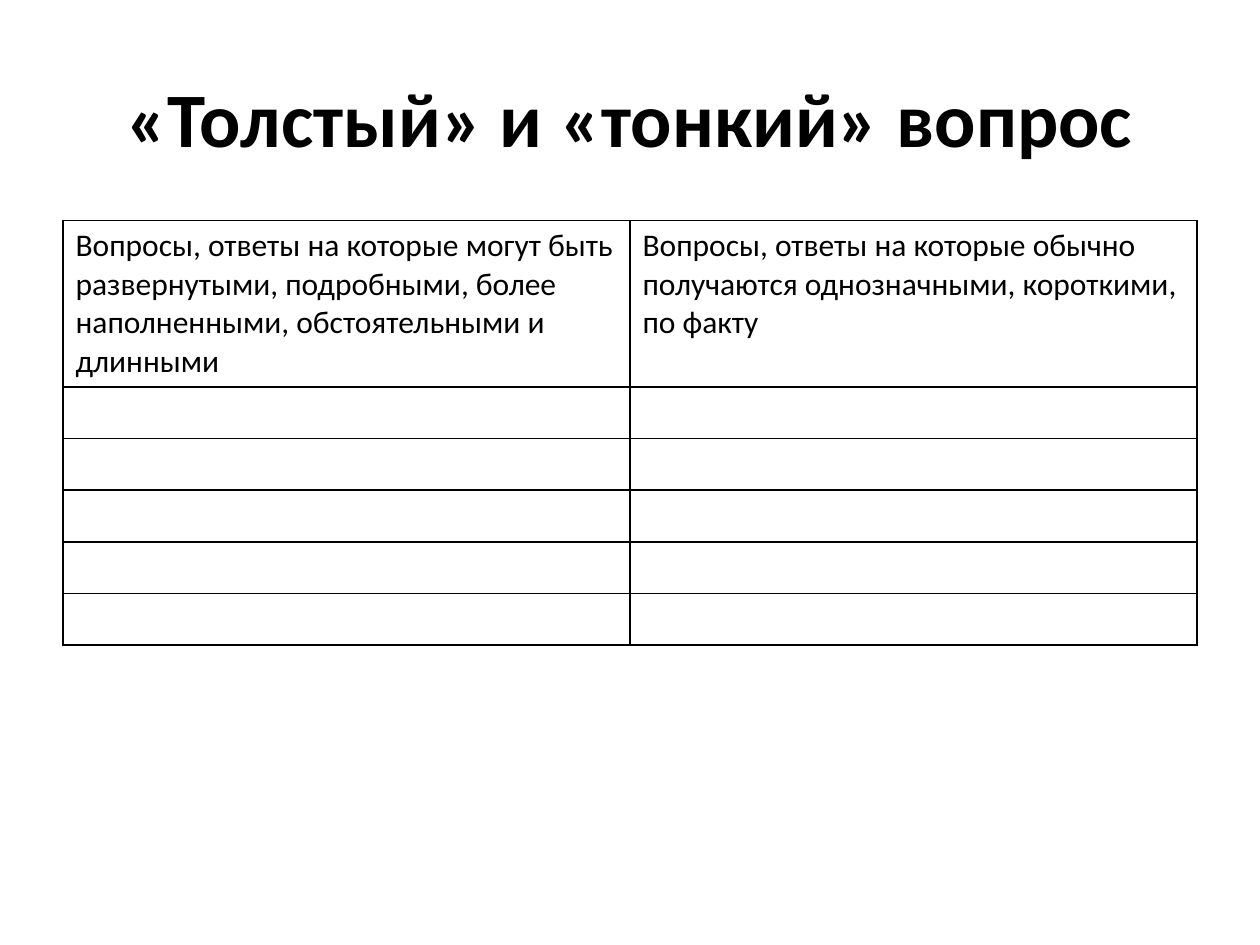
from dataclasses import dataclass

from lxml.etree import SubElement
from pptx import Presentation
from pptx.dml.color import RGBColor
from pptx.enum.text import MSO_ANCHOR, PP_ALIGN
from pptx.oxml.ns import qn
from pptx.util import Inches, Pt


@dataclass(frozen=True)
class Theme:
    font: str = "Calibri"
    ink: str = "000000"
    title_size: int = 44
    body_size: int = 18
    border_width: int = 1


@dataclass(frozen=True)
class Box:
    left: float
    top: float
    width: float
    height: float

    def lengths(self):
        return [Inches(n) for n in (self.left, self.top, self.width, self.height)]


THEME = Theme()
TITLE = "«Толстый» и «тонкий» вопрос"
HEADINGS = (
    "Вопросы, ответы на которые могут быть развернутыми, подробными, "
    "более наполненными, обстоятельными и длинными",
    "Вопросы, ответы на которые обычно получаются однозначными, короткими, по факту",
)
ANSWER_ROWS = 5
ANSWER_HEIGHT = 0.41


def style_paragraph(para, size, bold=False):
    para.font.name = THEME.font
    para.font.size = Pt(size)
    para.font.bold = bold
    para.font.color.rgb = RGBColor.from_string(THEME.ink)


def add_borders(cell):
    properties = cell._tc.get_or_add_tcPr()
    for position, side in enumerate(("lnL", "lnR", "lnT", "lnB")):
        line = SubElement(properties, qn(f"a:{side}"), w=str(Pt(THEME.border_width)))
        fill = SubElement(line, qn("a:solidFill"))
        SubElement(fill, qn("a:srgbClr"), val=THEME.ink)
        properties.insert(position, line)


def place_title(page, box):
    title = page.shapes.title
    title.left, title.top, title.width, title.height = box.lengths()
    frame = title.text_frame
    frame.text = TITLE
    frame.vertical_anchor = MSO_ANCHOR.MIDDLE
    para = frame.paragraphs[0]
    para.alignment = PP_ALIGN.CENTER
    style_paragraph(para, THEME.title_size, bold=True)


def place_question_table(page, box):
    frame = page.shapes.add_table(ANSWER_ROWS + 1, len(HEADINGS), *box.lengths())
    table = frame.table
    table.first_row = False
    table.horz_banding = False
    for column in table.columns:
        column.width = Inches(box.width / len(HEADINGS))
    for row in table.rows:
        row.height = Inches(ANSWER_HEIGHT)
    table.rows[0].height = Inches(box.height - ANSWER_ROWS * ANSWER_HEIGHT)
    for cell, heading in zip(table.rows[0].cells, HEADINGS):
        cell.text = heading
    for cell in table.iter_cells():
        cell.fill.background()
        add_borders(cell)
        style_paragraph(cell.text_frame.paragraphs[0], THEME.body_size)


def main():
    deck = Presentation()
    deck.slide_width, deck.slide_height = Inches(10), Inches(7.5)
    page = deck.slides.add_slide(deck.slide_layouts[5])
    place_title(page, Box(0.5, 0.3, 9, 1.25))
    place_question_table(page, Box(0.5, 1.75, 9, 3.35))
    deck.save("out.pptx")


if __name__ == "__main__":
    main()
